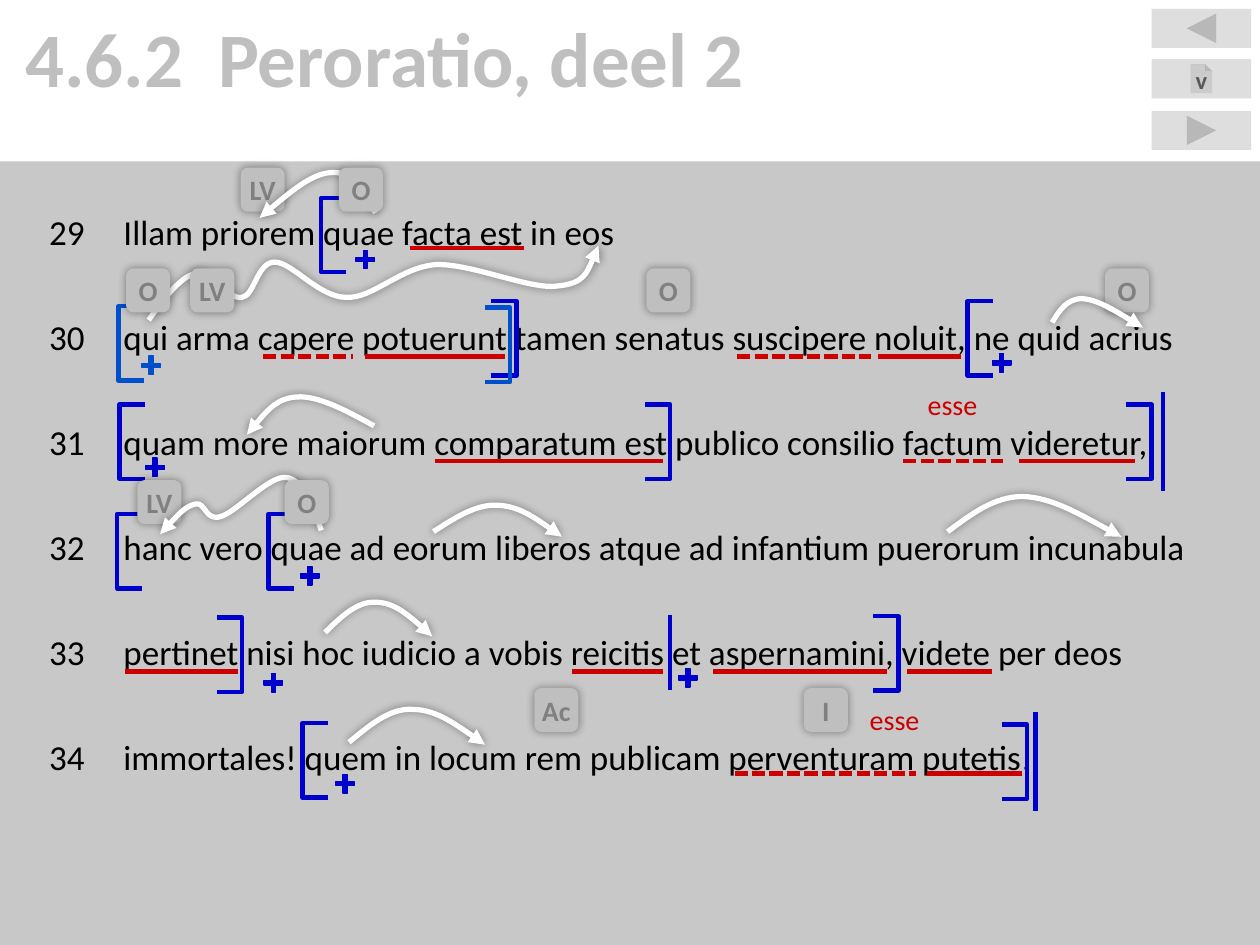
import pptx
import pptx.dml.color
import pptx.enum.dml
import pptx.enum.shapes
import pptx.enum.text
import pptx.oxml.ns
import pptx.util
from lxml import etree

Inches, Pt = pptx.util.Inches, pptx.util.Pt
RGBColor = pptx.dml.color.RGBColor
SHAPES = pptx.enum.shapes.MSO_SHAPE
ALIGN = pptx.enum.text.PP_ALIGN
ANCHOR = pptx.enum.text.MSO_ANCHOR
AUTO_SIZE = pptx.enum.text.MSO_AUTO_SIZE
qn = pptx.oxml.ns.qn

WHITE = RGBColor(0xFF, 0xFF, 0xFF)
BLACK = RGBColor(0, 0, 0)
SILVER = RGBColor(0xBF, 0xBF, 0xBF)
GREY = RGBColor(0x80, 0x80, 0x80)
DARK_GREY = RGBColor(0x59, 0x59, 0x59)
RED = RGBColor(0xCC, 0, 0)
BLUE = RGBColor(0, 0, 0xCC)
LIGHT_BLUE = RGBColor(0, 0x50, 0xCC)

LATIN_LINES = [
    "29\tIllam priorem quae facta est in eos",
    "30\tqui arma capere potuerunt tamen senatus suscipere noluit, ne quid acrius",
    "31\tquam more maiorum comparatum est publico consilio factum videretur,",
    "32\thanc vero quae ad eorum liberos atque ad infantium puerorum incunabula",
    "33\tpertinet nisi hoc iudicio a vobis reicitis et aspernamini, videte per deos",
    "34\timmortales! quem in locum rem publicam perventuram putetis!",
]

# Underlined verbs: height -> (start, end, dashed)
UNDERLINES = {
    1.97: [(3.25, 4.16, False)],
    2.83: [(2.09, 2.8, True), (2.9, 4.01, False), (5.85, 6.91, True), (6.97, 7.63, False)],
    3.66: [(3.45, 5.26, False), (7.17, 7.96, True), (8.09, 9.01, False)],
    5.33: [(0.99, 1.89, False), (4.54, 5.26, False), (5.66, 7.04, False), (7.2, 7.87, False)],
    6.14: [(5.83, 7.27, True), (7.36, 8.11, False)],
}
OPENINGS = [(2.55, 1.57, BLUE), (0.94, 2.43, LIGHT_BLUE), (7.68, 2.39, BLUE), (0.95, 3.21, BLUE),
            (2.13, 4.08, BLUE), (0.93, 4.08, BLUE), (2.4, 5.74, BLUE)]
CLOSINGS = [(4.1, 2.39, BLUE), (4.05, 2.44, LIGHT_BLUE), (9.14, 3.21, BLUE), (5.32, 3.21, BLUE),
            (1.92, 4.9, BLUE), (7.13, 4.89, BLUE), (8.15, 5.75, BLUE)]
PLUSES = [(2.8, 1.96, BLUE), (1.1, 2.8, LIGHT_BLUE), (7.85, 2.78, BLUE), (1.13, 3.61, BLUE),
          (2.36, 4.47, BLUE), (2.07, 5.32, BLUE), (5.36, 5.28, BLUE), (2.64, 6.12, BLUE)]
SENTENCE_BARS = [(8.22, 5.65, 6.44), (9.23, 3.11, 3.9), (5.32, 4.88, 5.48)]

CHIPS_BEHIND = [("LV", 1.91, 1.33), ("O", 8.77, 2.13), ("LV", 1.09, 3.81)]
CHIPS_IN_FRONT = [("O", 2.69, 1.33), ("O", 1, 2.13), ("LV", 1.51, 2.13), ("O", 5.13, 2.13),
                  ("O", 2.26, 3.81), ("I", 6.38, 5.46), ("Ac", 4.24, 5.46)]
# Each arrow is a start point followed by three Bézier points per section
ARROWS = [
    [(2.98, 1.69), (2.89, 1.52), (2.8, 1.36), (2.64, 1.37), (2.49, 1.37), (2.27, 1.55), (2.06, 1.73)],
    [(1.18, 2.54), (1.3, 2.37), (1.43, 2.2), (1.55, 2.17), (1.67, 2.14), (1.81, 2.38), (1.92, 2.36),
     (2.02, 2.35), (2.04, 2.08), (2.18, 2.08), (2.32, 2.08), (2.53, 2.36), (2.75, 2.36),
     (2.96, 2.37), (3.18, 2.12), (3.46, 2.1), (3.74, 2.09), (4.21, 2.3), (4.42, 2.27),
     (4.64, 2.25), (4.69, 2.1), (4.75, 1.95)],
    [(8.35, 2.56), (8.41, 2.46), (8.47, 2.37), (8.59, 2.37), (8.71, 2.38), (8.89, 2.49), (9.07, 2.6)],
    [(2.97, 3.38), (2.75, 3.26), (2.53, 3.14), (2.36, 3.15), (2.2, 3.16), (2.08, 3.3), (1.96, 3.45)],
    [(2.55, 4.21), (2.48, 4.01), (2.4, 3.8), (2.27, 3.79), (2.14, 3.77), (1.87, 4.07), (1.75, 4.1),
     (1.63, 4.14), (1.63, 3.98), (1.55, 4), (1.47, 4.02), (1.37, 4.13), (1.27, 4.24)],
    [(3.44, 4.22), (3.61, 4.11), (3.78, 4), (3.95, 4.01), (4.12, 4.02), (4.29, 4.14), (4.46, 4.26)],
    [(7.52, 4.22), (7.71, 4.08), (7.89, 3.94), (8.12, 3.94), (8.35, 3.95), (8.62, 4.11), (8.9, 4.26)],
    [(2.58, 5.02), (2.71, 4.89), (2.84, 4.77), (2.98, 4.78), (3.12, 4.78), (3.28, 4.91), (3.43, 5.05)],
    [(2.77, 5.89), (2.93, 5.76), (3.09, 5.62), (3.27, 5.63), (3.45, 5.63), (3.65, 5.77), (3.85, 5.91)],
]


def write(para, text, size=20, color=BLACK, bold=False, align=ALIGN.LEFT, after=0):
    para.alignment = align
    para.space_before, para.space_after = Pt(0), Pt(after)
    span = para.add_run()
    span.text = text
    span.font.name, span.font.size, span.font.bold = "Calibri", Pt(size), bold
    span.font.color.rgb = color


def set_frame(frame, margins, anchor=ANCHOR.TOP, wrap=True, fit=AUTO_SIZE.NONE):
    """Set the margins (left, top, right, bottom) and flow of a text frame."""
    (frame.margin_left, frame.margin_top,
     frame.margin_right, frame.margin_bottom) = map(Inches, margins)
    frame.vertical_anchor, frame.word_wrap, frame.auto_size = anchor, wrap, fit


def fill_shape(shape, color, opacity=100):
    shape.fill.solid()
    shape.fill.fore_color.rgb = color
    if opacity < 100:
        tint = shape._element.spPr.find(".//" + qn("a:srgbClr"))
        etree.SubElement(tint, qn("a:alpha"), val=str(opacity * 1000))


def add_glow(shape):
    """Put a soft shadow evenly around the shape."""
    shape.shadow.inherit = False
    effects = shape._element.spPr.find(qn("a:effectLst"))
    shadow = etree.SubElement(effects, qn("a:outerShdw"), blurRad=str(Pt(5)), dist="0", dir="0")
    tint = etree.SubElement(shadow, qn("a:srgbClr"), val=str(BLACK))
    etree.SubElement(tint, qn("a:alpha"), val="40000")


class ParsedText:
    def __init__(self, page):
        self.page = page
        self.stroke = Pt(2.5)

    def title(self, text):
        box = self.page.shapes.title
        box.left, box.top, box.width, box.height = map(Inches, (0, 0, 10, 1.28))
        set_frame(box.text_frame, (0.2, 0.08, 0.2, 0.2))
        write(box.text_frame.paragraphs[0], text, size=44, color=SILVER, bold=True)

    def passage(self, lines):
        """Write numbered lines on a panel, with the text after a tab stop."""
        frame = self.shape(SHAPES.RECTANGLE, 0, 1.28, 10, 6.22, SILVER, opacity=85).text_frame
        set_frame(frame, [0.39] * 4)
        stop = str(Inches(0.59))
        for index, line in enumerate(lines):
            para = frame.add_paragraph() if index else frame.paragraphs[0]
            format_element = para._p.get_or_add_pPr()
            format_element.set("defTabSz", stop)
            tabs = etree.SubElement(format_element, qn("a:tabLst"))
            etree.SubElement(tabs, qn("a:tab"), pos=stop, algn="l")
            write(para, line, after=36)

    def shape(self, kind, left, top, width, height, color, opacity=100):
        shape = self.page.shapes.add_shape(kind, *map(Inches, (left, top, width, height)))
        shape.shadow.inherit = False
        fill_shape(shape, color, opacity)
        shape.line.fill.background()
        return shape

    def button(self, kind, top, text=""):
        shape = self.shape(kind, 9.14, top, 0.79, 0.31, SILVER, opacity=50)
        if text:
            set_frame(shape.text_frame, (0.1, 0.05, 0.1, 0.05))
            write(shape.text_frame.paragraphs[0], text, size=14, color=DARK_GREY,
                  bold=True, align=ALIGN.CENTER)

    def chip(self, text, left, top):
        shape = self.shape(SHAPES.ROUNDED_RECTANGLE, left, top, 0.35, 0.35, SILVER)
        add_glow(shape)
        set_frame(shape.text_frame, [0] * 4, anchor=ANCHOR.MIDDLE)
        write(shape.text_frame.paragraphs[0], text, size=16, color=GREY,
              bold=True, align=ALIGN.CENTER)

    def plus(self, left, top, color):
        shape = self.shape(SHAPES.MATH_PLUS, left, top, 0.2, 0.2, color)
        shape.adjustments[0] = 0.172
        shape.line.color.rgb, shape.line.width = color, Pt(0)

    def note(self, text, left, top):
        box = self.page.shapes.add_textbox(*map(Inches, (left, top, 0.4, 0.37)))
        set_frame(box.text_frame, (0, 0.05, 0, 0.05), wrap=False, fit=AUTO_SIZE.SHAPE_TO_FIT_TEXT)
        write(box.text_frame.paragraphs[0], text, size=16, color=RED, align=ALIGN.CENTER)

    def line(self, start, end, color, dashed=False):
        line = self.page.shapes.add_connector(
            pptx.enum.shapes.MSO_CONNECTOR.STRAIGHT, *map(Inches, start + end))
        line.line.color.rgb, line.line.width = color, self.stroke
        if dashed:
            line.line.dash_style = pptx.enum.dml.MSO_LINE.SQUARE_DOT
        etree.SubElement(line._element.spPr, qn("a:effectLst"))

    def outline(self, points, color, width):
        corners = [tuple(map(Inches, point)) for point in points]
        builder = self.page.shapes.build_freeform(*corners[0])
        builder.add_line_segments(corners[1:], close=False)
        shape = builder.convert_to_shape()
        shape.fill.background()
        shape.line.color.rgb, shape.line.width = color, width
        shape.shadow.inherit = False
        return shape

    def bracket(self, spine, top, color, arm):
        """Draw a bracket whose arms reach from the spine by arm inches."""
        bottom = top + 0.59
        self.outline([(spine + arm, top), (spine, top), (spine, bottom), (spine + arm, bottom)],
                     color, self.stroke)

    def curved_arrow(self, points):
        shape = self.outline(points, WHITE, Pt(3))
        steps = list(shape._element.iter(qn("a:lnTo")))
        for first in range(0, len(steps), 3):
            curve = etree.SubElement(steps[first].getparent(), qn("a:cubicBezTo"))
            for step in steps[first:first + 3]:
                curve.append(step[0])
                step.getparent().remove(step)
        etree.SubElement(shape._element.spPr.find(qn("a:ln")), qn("a:tailEnd"), type="triangle")
        add_glow(shape)


def main():
    deck = pptx.Presentation()
    deck.slide_width, deck.slide_height = Inches(10), Inches(7.5)
    sheet = ParsedText(deck.slides.add_slide(deck.slide_layouts[5]))
    sheet.title("4.6.2  Peroratio, deel 2")
    sheet.button(SHAPES.ACTION_BUTTON_BACK_OR_PREVIOUS, 0.07)
    sheet.button(SHAPES.ACTION_BUTTON_FORWARD_OR_NEXT, 0.88)
    sheet.button(SHAPES.ACTION_BUTTON_DOCUMENT, 0.47, "v")
    sheet.passage(LATIN_LINES)
    for height, spans in UNDERLINES.items():
        for start, end, dashed in spans:
            sheet.line((start, height), (end, height), RED, dashed)
    for left, top in [(7.36, 3.03), (6.9, 5.53)]:
        sheet.note("esse", left, top)
    for brackets, arm in [(OPENINGS, 0.2), (CLOSINGS, -0.2)]:
        for spine, top, color in brackets:
            sheet.bracket(spine, top, color, arm)
    for plus in PLUSES:
        sheet.plus(*plus)
    for left, top, bottom in SENTENCE_BARS:
        sheet.line((left, top), (left, bottom), BLUE)
    for chip in CHIPS_BEHIND:
        sheet.chip(*chip)
    for points in ARROWS:
        sheet.curved_arrow(points)
    for chip in CHIPS_IN_FRONT:
        sheet.chip(*chip)
    deck.save("out.pptx")


if __name__ == "__main__":
    main()
